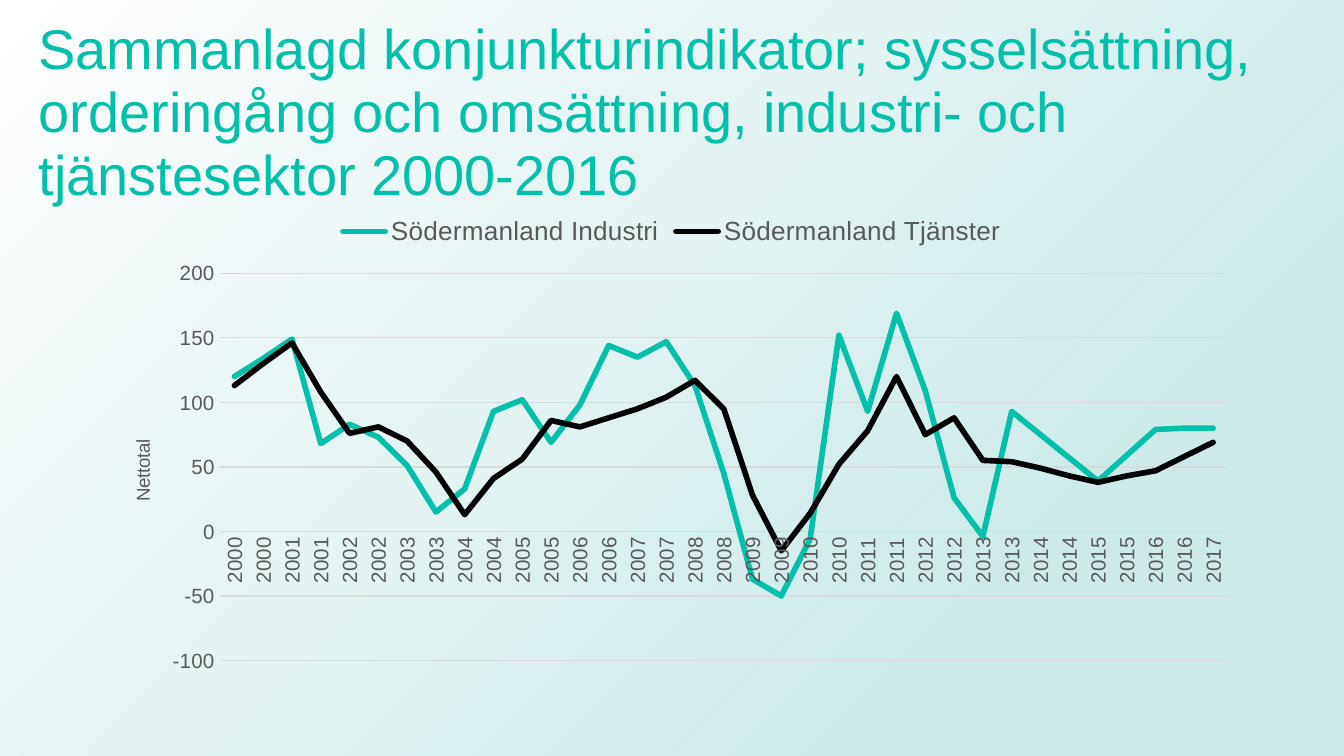
from dataclasses import dataclass

from lxml import etree
from pptx import Presentation
from pptx import util as u
from pptx.chart import data
from pptx.dml.color import RGBColor
from pptx.enum import chart as ch
from pptx.enum import shapes, text
from pptx.oxml import ns, parse_xml


@dataclass(frozen=True)
class Theme:
    accent: RGBColor = RGBColor(0x00, 0xC0, 0xA9)
    black: RGBColor = RGBColor(0x00, 0x00, 0x00)
    muted: RGBColor = RGBColor(0x59, 0x59, 0x59)
    grid: RGBColor = RGBColor(0xD9, 0xD9, 0xD9)
    mist: RGBColor = RGBColor(0xCD, 0xEA, 0xE9)
    white: RGBColor = RGBColor(0xFF, 0xFF, 0xFF)
    font: str = "Arial"
    chart_font: str = "Calibri"
    heading: int = 30
    legend: int = 14
    labels: int = 11
    small: int = 10


class SlideBuilder:
    def __init__(self, slide, theme):
        self.slide = slide
        self.theme = theme

    def style(self, font, size, color, name=None):
        font.name = name or self.theme.font
        font.size = u.Pt(size)
        font.color.rgb = color
        font.bold = False

    def background(self, width, height):
        backdrop = self.slide.shapes.add_shape(
            shapes.MSO_SHAPE.RECTANGLE, 0, 0, width, height)
        backdrop.shadow.inherit = False
        backdrop.line.fill.background()
        backdrop.fill.gradient()
        stops = zip(backdrop.fill.gradient_stops,
                    (self.theme.mist, self.theme.white), (0.23, 1))
        for stop, color, position in stops:
            stop.color.rgb = color
            stop.position = position
        gradient = backdrop._element.spPr.find(ns.qn("a:gradFill"))
        radial = parse_xml(
            f'<a:path {ns.nsdecls("a")} path="circle">'
            '<a:fillToRect l="100000" t="100000"/></a:path>')
        gradient.replace(gradient.find(ns.qn("a:lin")), radial)

    def heading(self, wording, left, top, width, height):
        frame = self.slide.shapes.add_textbox(left, top, width, height).text_frame
        frame.word_wrap = True
        frame.vertical_anchor = text.MSO_ANCHOR.MIDDLE
        paragraph = frame.paragraphs[0]
        paragraph.text = wording
        paragraph.line_spacing = 0.94
        self.style(paragraph.font, self.theme.heading, self.theme.accent)

    def place(self, parent, before, inner=False, **fractions):
        layout = parent.find(ns.qn("c:layout"))
        if layout is None:
            layout = etree.Element(ns.qn("c:layout"))
            parent.find(ns.qn(before)).addprevious(layout)
        manual = etree.SubElement(layout, ns.qn("c:manualLayout"))
        settings = {"layoutTarget": "inner"} if inner else {}
        settings |= {"xMode": "edge", "yMode": "edge", **fractions}
        for tag, value in settings.items():
            etree.SubElement(manual, ns.qn(f"c:{tag}")).set("val", str(value))

    def line_chart(self, years, series, colors, axis_title, left, top, width, height):
        theme = self.theme
        figures = data.CategoryChartData(number_format="0")
        figures.categories = years
        for name, values in series.items():
            figures.add_series(name, values)
        chart = self.slide.shapes.add_chart(
            ch.XL_CHART_TYPE.LINE, left, top, width, height, figures).chart
        self.style(chart.font, theme.small, theme.black, theme.chart_font)
        chart.has_title = False
        chart.has_legend = True
        chart.legend.position = ch.XL_LEGEND_POSITION.TOP
        chart.legend.include_in_layout = False
        self.style(chart.legend.font, theme.legend, theme.muted)

        plot = chart.plots[0]
        plot.vary_by_categories = False
        for line, color in zip(plot.series, colors):
            line.smooth = False
            line.marker.style = ch.XL_MARKER_STYLE.NONE
            line.format.line.color.rgb = color
            line.format.line.width = u.Pt(3)
            stroke = line.format.line._get_or_add_ln()
            stroke.set("cap", "rnd")
            etree.SubElement(stroke, ns.qn("a:round"))

        self.axes(chart, axis_title)
        self.place(chart._chartSpace.chart.plotArea, "c:lineChart", inner=True,
                   x=0.11, y=0.15, w=0.87, h=0.81)

    def axes(self, chart, axis_title):
        theme = self.theme
        years, totals = chart.category_axis, chart.value_axis
        for axis in (years, totals):
            axis.major_tick_mark = ch.XL_TICK_MARK.NONE
            axis.minor_tick_mark = ch.XL_TICK_MARK.NONE
            self.style(axis.tick_labels.font, theme.labels, theme.muted)
        for line in (years.format.line, totals.major_gridlines.format.line):
            line.color.rgb = theme.grid
            line.width = u.Pt(0.75)
        totals.format.line.fill.background()

        rotation = years._element.find(ns.qn("c:txPr")).find(ns.qn("a:bodyPr"))
        rotation.set("rot", "-5400000")
        rotation.set("vert", "horz")
        skip = etree.Element(ns.qn("c:tickLblSkip"))
        skip.set("val", "1")
        years._element.find(ns.qn("c:noMultiLvlLbl")).addprevious(skip)

        totals.minimum_scale, totals.maximum_scale = -100, 200
        totals.major_unit = 50
        totals.tick_labels.number_format = "0"
        totals.tick_labels.number_format_is_linked = False
        title = totals.axis_title
        title.text_frame.text = axis_title
        self.style(title.text_frame.paragraphs[0].font, theme.small, theme.muted)
        turned = title._element.find(".//" + ns.qn("a:bodyPr"))
        turned.set("rot", "-5400000")
        turned.set("vert", "horz")
        self.place(title._element, "c:overlay", x=0.03, y=0.49)


def main():
    theme = Theme()
    presentation = Presentation()
    presentation.slide_width = u.Cm(25.4)
    presentation.slide_height = u.Cm(14.29)
    builder = SlideBuilder(
        presentation.slides.add_slide(presentation.slide_layouts[6]), theme)

    builder.background(presentation.slide_width, presentation.slide_height)
    builder.heading(
        "Sammanlagd konjunkturindikator; sysselsättning, orderingång och "
        "omsättning, industri- och tjänstesektor 2000-2016",
        u.Cm(0.48), u.Cm(0.76), u.Cm(25.45), u.Cm(2.77))

    half_years = [str(2000 + half // 2) for half in range(35)]
    indicators = {
        "Södermanland Industri": (
            120, 134, 149, 68, 83, 73, 51, 15, 33, 93, 102, 69,
            98, 144, 135, 147, 113, 45, -37, -50, -6, 152, 93, 169,
            109, 26, -4, 93, 75, 57, 39, 59, 79, 80, 80),
        "Södermanland Tjänster": (
            113, 130, 146, 108, 76, 81, 70, 46, 13, 41, 56, 86,
            81, 88, 95, 104, 117, 95, 28, -15, 14, 52, 78, 120,
            75, 88, 55, 54, 49, 43, 38, 43, 47, 58, 69),
    }
    builder.line_chart(half_years, indicators, (theme.accent, theme.black),
                       "Nettotal", u.Cm(1.75), u.Cm(3.81), u.Cm(21.89), u.Cm(9.04))
    presentation.save("out.pptx")


if __name__ == "__main__":
    main()
